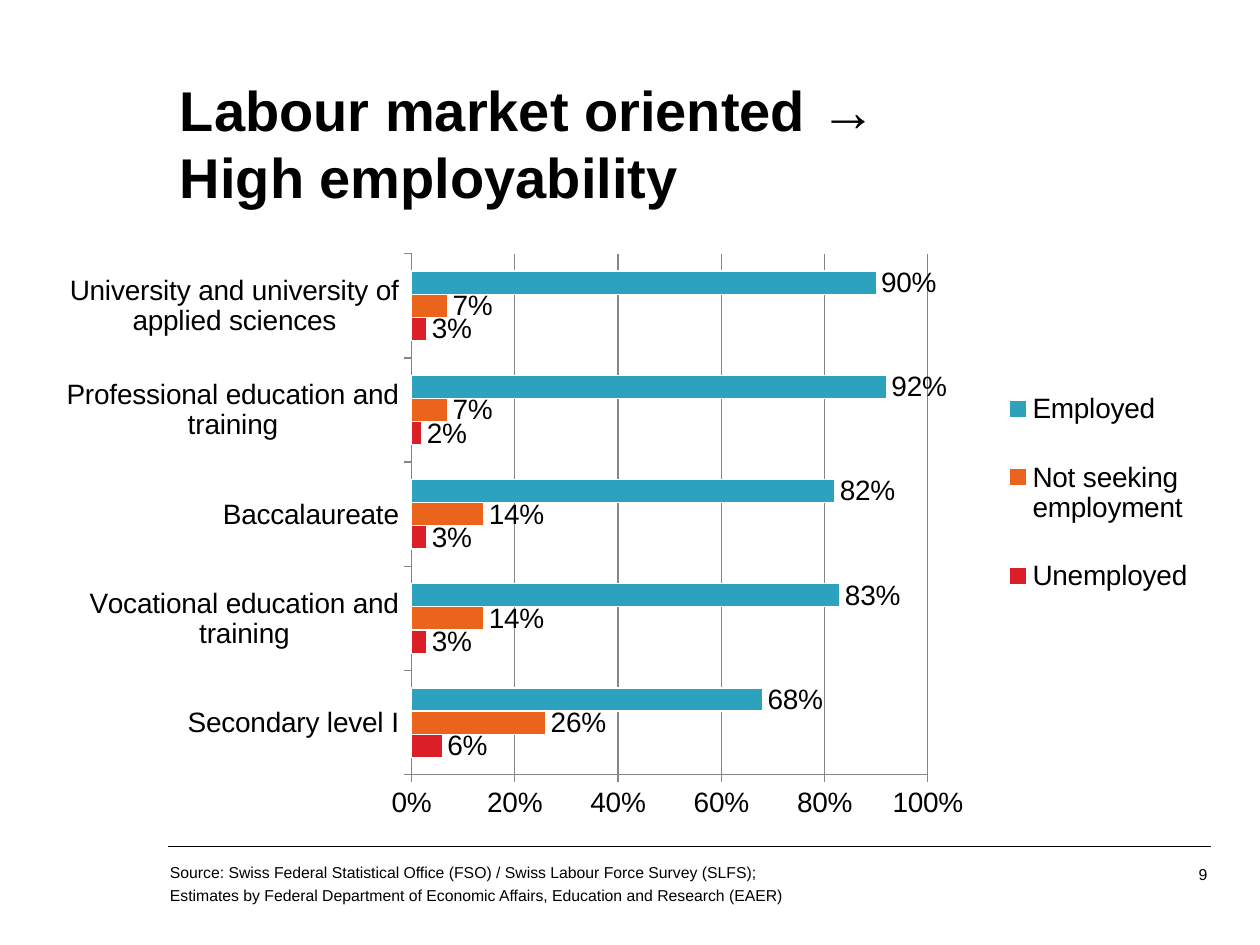
from lxml.etree import SubElement
from pptx import Presentation
from pptx.chart.data import CategoryChartData
from pptx.dml.color import RGBColor
from pptx.enum.chart import (XL_CHART_TYPE, XL_LABEL_POSITION,
                             XL_LEGEND_POSITION, XL_TICK_MARK)
from pptx.enum.shapes import MSO_CONNECTOR
from pptx.enum.text import PP_ALIGN
from pptx.oxml import parse_xml
from pptx.oxml.ns import nsdecls, qn
from pptx.util import Inches, Pt

BLACK = RGBColor(0x00, 0x00, 0x00)
WHITE = RGBColor(0xFF, 0xFF, 0xFF)
GREY = RGBColor(0x86, 0x86, 0x86)
RED = RGBColor(0xDA, 0x1F, 0x28)
ORANGE = RGBColor(0xEB, 0x64, 0x1B)
BLUE = RGBColor(0x2D, 0xA2, 0xBF)

LEVELS = ["Secondary level I", "Vocational education and training",
          "Baccalaureate", "Professional education and training",
          "University and university of applied sciences"]
SERIES = [
    ("Unemployed", RED, [0.06, 0.03, 0.03, 0.02, 0.03]),
    ("Not seeking employment", ORANGE, [0.26, 0.14, 0.14, 0.07, 0.07]),
    ("Employed", BLUE, [0.68, 0.83, 0.82, 0.92, 0.9]),
]


def place(part, x, y, w, h, inner=False):
    """Give a chart part a manual layout in fractions of the chart."""
    for old in part.findall(qn("c:layout")):
        part.remove(old)
    target = '<c:layoutTarget val="inner"/>' if inner else ""
    sizes = "".join(f'<c:{tag} val="{val}"/>'
                    for tag, val in zip("xywh", (x, y, w, h)))
    layout = parse_xml(
        f'<c:layout {nsdecls("c")}><c:manualLayout>{target}'
        '<c:xMode val="edge"/><c:yMode val="edge"/>'
        f'{sizes}</c:manualLayout></c:layout>')
    part.insert(0 if inner else 1, layout)


class Page:
    font = "Arial"

    def __init__(self, slide):
        self.slide = slide

    def style(self, font, size, bold=False):
        font.name = self.font
        font.size = Pt(size)
        font.bold = bold
        font.color.rgb = BLACK

    def text(self, x, y, w, h, text, size, bold=False, align=PP_ALIGN.LEFT):
        box = self.slide.shapes.add_textbox(
            Inches(x), Inches(y), Inches(w), Inches(h))
        frame = box.text_frame
        frame.word_wrap = True
        frame.text = text
        for para in frame.paragraphs:
            para.alignment = align
            for run in para.runs:
                self.style(run.font, size, bold)
        return frame

    def line(self, x1, y1, x2, y2):
        line = self.slide.shapes.add_connector(
            MSO_CONNECTOR.STRAIGHT, Inches(x1), Inches(y1),
            Inches(x2), Inches(y2))
        line.line.color.rgb = BLACK
        line.line.width = Pt(0.5)
        SubElement(line._element.spPr, qn("a:effectLst"))

    def chart(self, x, y, w, h):
        data = CategoryChartData(number_format="0%")
        data.categories = LEVELS
        for name, _, vals in SERIES:
            data.add_series(name, vals)
        chart = self.slide.shapes.add_chart(
            XL_CHART_TYPE.BAR_CLUSTERED, Inches(x), Inches(y),
            Inches(w), Inches(h), data).chart
        self.style(chart.font, 16)
        chart.has_title = False
        self.bars(chart.plots[0])
        self.axes(chart)
        chart.has_legend = True
        chart.legend.position = XL_LEGEND_POSITION.RIGHT
        chart.legend.include_in_layout = False
        place(chart.legend._element, 0.8, 0.2, 0.2, 0.45)
        place(chart._chartSpace.chart.plotArea,
              0.308, 0.032, 0.445, 0.858, inner=True)

    def bars(self, plot):
        plot.gap_width = 150
        plot.vary_by_categories = False
        for bar, (_, color, _) in zip(plot.series, SERIES):
            bar.format.fill.solid()
            bar.format.fill.fore_color.rgb = color
            bar.format.line.color.rgb = WHITE
            bar.format.line.width = Pt(0.75)
            labels = bar.data_labels
            labels.show_value = True
            labels.number_format = "0%"
            labels.number_format_is_linked = False
            labels.position = XL_LABEL_POSITION.OUTSIDE_END
            self.style(labels.font, 16)

    def axes(self, chart):
        scale = chart.value_axis
        scale.minimum_scale = 0
        scale.maximum_scale = 1
        scale.major_unit = 0.2
        scale.has_major_gridlines = True
        scale.major_gridlines.format.line.color.rgb = GREY
        scale.tick_labels.number_format = "0%"
        scale.tick_labels.number_format_is_linked = False
        for axis in (scale, chart.category_axis):
            axis.major_tick_mark = XL_TICK_MARK.OUTSIDE
            axis.format.line.color.rgb = GREY
            self.style(axis.tick_labels.font, 16)


def main():
    deck = Presentation()
    deck.slide_width = Inches(10)
    deck.slide_height = Inches(7.5)
    page = Page(deck.slides.add_slide(deck.slide_layouts[6]))

    page.line(1.33, 6.72, 9.61, 6.72)
    page.text(1.33, 0.55, 8.48, 0.78,
              "Labour market oriented → \vHigh employability", 32, bold=True)
    source = page.text(
        1.25, 6.8, 7.45, 0.39,
        "Source: Swiss Federal Statistical Office (FSO) / "
        "Swiss Labour Force Survey (SLFS);\n"
        "Estimates by Federal Department of Economic Affairs, "
        "Education and Research (EAER)", 9)
    source.paragraphs[1].space_before = Pt(2)
    number = page.text(7.24, 6.8, 2.44, 0.4, "9", 9, align=PP_ALIGN.RIGHT)
    number.paragraphs[0].line_spacing = Pt(12)
    page.chart(0.43, 1.86, 9.21, 4.82)

    deck.save("out.pptx")


if __name__ == "__main__":
    main()
